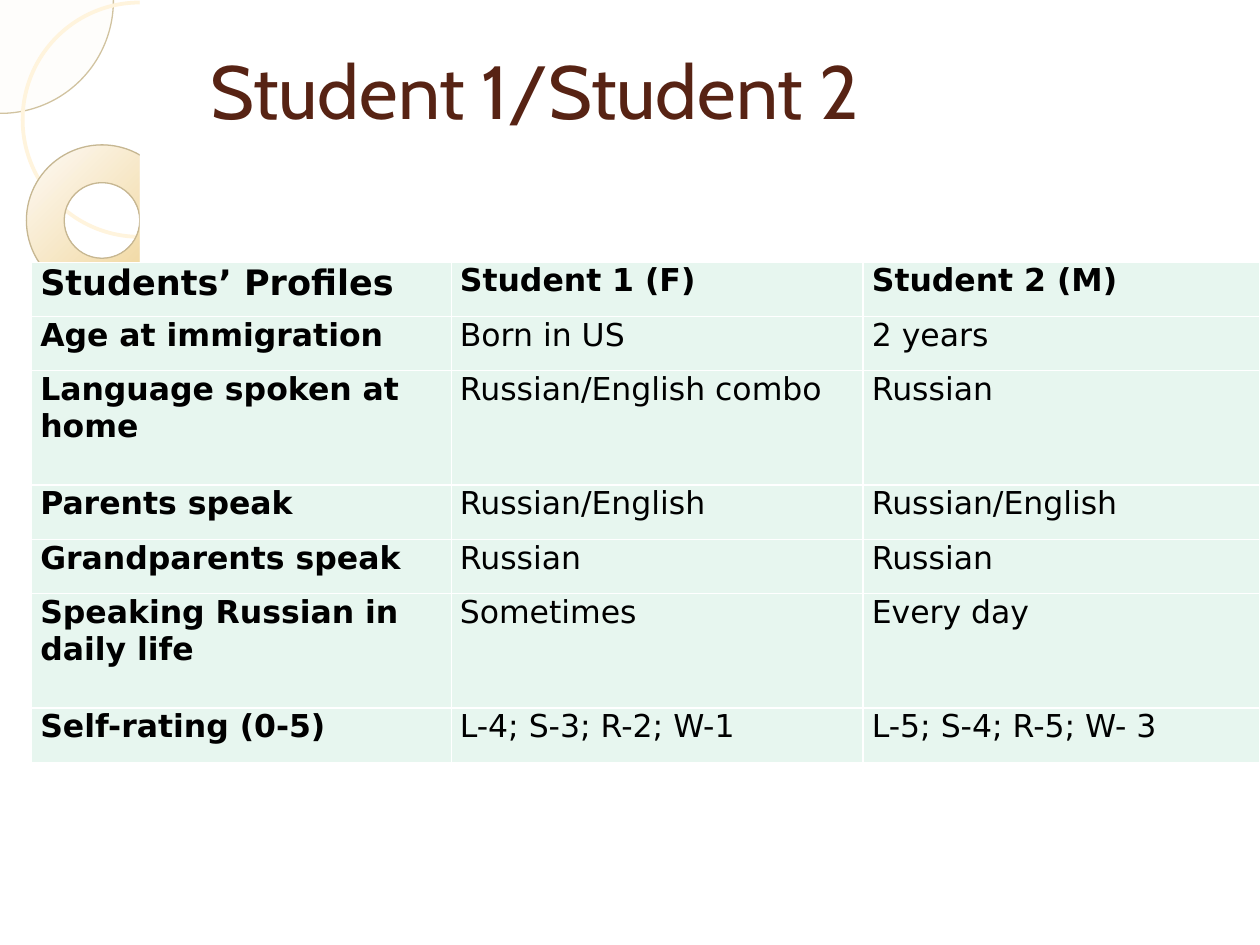
"""Build a slide comparing the profiles of two heritage students."""
from lxml.etree import SubElement
from pptx import Presentation
from pptx.dml.color import RGBColor
from pptx.enum.shapes import MSO_SHAPE as Shape
from pptx.enum.text import MSO_ANCHOR as Anchor, PP_ALIGN as Align
from pptx.oxml import parse_xml
from pptx.oxml.ns import nsdecls, qn
from pptx.util import Inches, Pt

TITLE = "Student 1/Student 2"
PROFILES = [
    ("Students’ Profiles", "Student 1 (F)", "Student 2 (M)"),
    ("Age at immigration", "Born in US", "2 years"),
    ("Language spoken at home", "Russian/English combo", "Russian"),
    ("Parents speak", "Russian/English", "Russian/English"),
    ("Grandparents speak", "Russian", "Russian"),
    ("Speaking Russian in daily life", "Sometimes", "Every day"),
    ("Self-rating (0-5)", "L-4; S-3; R-2; W-1", "L-5; S-4; R-5; W- 3"),
]
TALL_ROWS = (2, 5)
COL_WIDTHS = (3.33, 3.27, 3.15)
ROW_HEIGHT, TALL_HEIGHT = 0.43, 0.91
THEME = dict(
    title_font="Cabin", body_font="DejaVu Sans",
    title_size=43, corner_size=20, body_size=18,
    title="572314", text="000000", cell="E7F6EF", white="FFFFFF",
    disc="FCFAF4", disc_line="D1C3A0", ring_line="FFF4DD",
    donut=("FEFAF6", "EED18E"), donut_line="C6B792",
)


def rgb(name):
    return RGBColor.from_string(THEME.get(name, name))


def write(tf, text, *, font, size, color, bold=False, spacing=1.0):
    p = tf.paragraphs[0]
    p.alignment, p.line_spacing = Align.LEFT, spacing
    r = p.add_run()
    r.text = text
    r.font.name, r.font.size, r.font.bold = THEME[font], Pt(THEME[size]), bold
    r.font.color.rgb = rgb(color)


def decorate(slide, kind, box, fill=None, line=None, width=0.75):
    sp = slide.shapes.add_shape(kind, *map(Inches, box))
    sp.shadow.inherit = False
    if fill:
        sp.fill.solid()
        sp.fill.fore_color.rgb = rgb(fill)
    else:
        sp.fill.background()
    if line:
        sp.line.color.rgb, sp.line.width = rgb(line), Pt(width)
    else:
        sp.line.fill.background()
    return sp


def add_ornaments(slide):
    disc = decorate(slide, Shape.OVAL, (-0.89, -0.89, 1.79, 1.79), "disc", "disc_line")
    color = disc.fill._xPr.find(qn("a:solidFill"))[0]
    SubElement(color, qn("a:alpha"), val="33000")
    decorate(slide, Shape.OVAL, (0.18, 0.02, 1.86, 1.86), None, "ring_line", 2.15)
    donut = decorate(slide, Shape.DONUT, (0.21, 1.15, 1.2, 1.2), None, "donut_line")
    donut.adjustments[0] = 0.25
    donut.fill.gradient()
    donut.fill.gradient_angle = 315
    for stop, tone in zip(donut.fill.gradient_stops, THEME["donut"]):
        stop.color.rgb = rgb(tone)
    for width in (8.89, 0.08):
        decorate(slide, Shape.RECTANGLE, (1.11, 0, width, 7.5), "white")


def add_borders(cell):
    tc_pr = cell._tc.get_or_add_tcPr()
    for i, side in enumerate(("lnL", "lnR", "lnT", "lnB")):
        tc_pr.insert(i, parse_xml(
            f'<a:{side} {nsdecls("a")} w="9525"><a:solidFill>'
            f'<a:srgbClr val="{THEME["white"]}"/></a:solidFill></a:{side}>'))


def add_profiles(slide):
    heights = [TALL_HEIGHT if i in TALL_ROWS else ROW_HEIGHT for i in range(len(PROFILES))]
    box = (0.25, 2.08, sum(COL_WIDTHS), sum(heights))
    table = slide.shapes.add_table(len(PROFILES), len(COL_WIDTHS), *map(Inches, box)).table
    table.first_row = table.horz_banding = False
    for col, width in zip(table.columns, COL_WIDTHS):
        col.width = Inches(width)
    for i, (row, height) in enumerate(zip(table.rows, heights)):
        row.height = Inches(height)
        for j, cell in enumerate(row.cells):
            cell.margin_left = cell.margin_right = Inches(0.07)
            cell.margin_top = cell.margin_bottom = 0
            cell.fill.solid()
            cell.fill.fore_color.rgb = rgb("cell")
            add_borders(cell)
            write(cell.text_frame, PROFILES[i][j], font="body_font",
                  size="corner_size" if i == j == 0 else "body_size",
                  color="text", bold=i == 0 or j == 0, spacing=1.02)


def add_title(slide):
    title = slide.shapes.title
    slide.shapes._spTree.append(title._element)
    title.left, title.top, title.width, title.height = map(Inches, (1.57, 0.3, 8.2, 1.25))
    title.text_frame.vertical_anchor = Anchor.TOP
    write(title.text_frame, TITLE, font="title_font", size="title_size", color="title")


def main():
    prs = Presentation()
    prs.slide_width, prs.slide_height = Inches(10), Inches(7.5)
    slide = prs.slides.add_slide(prs.slide_layouts[5])
    add_ornaments(slide)
    add_title(slide)
    add_profiles(slide)
    prs.save("out.pptx")


if __name__ == "__main__":
    main()
